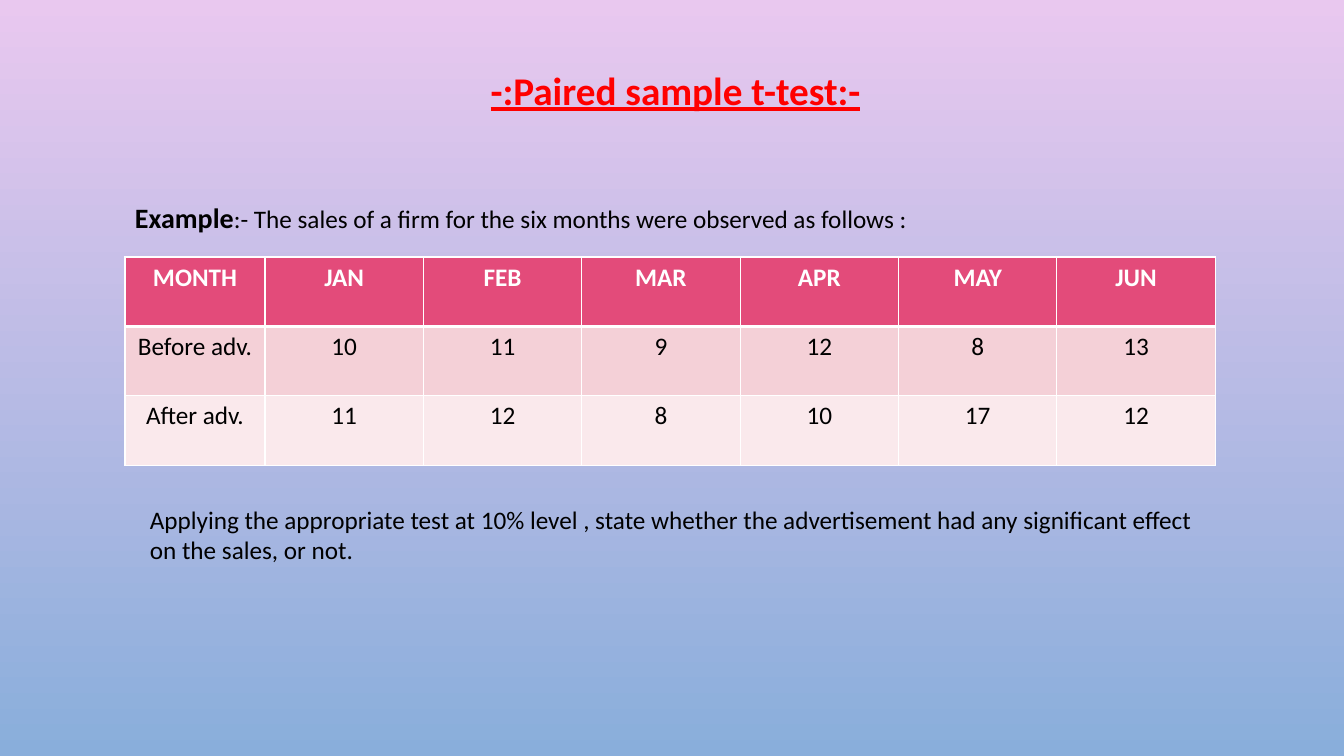
from lxml.etree import SubElement
from pptx import Presentation
from pptx.dml.color import RGBColor
from pptx.enum.text import MSO_ANCHOR as Anchor, MSO_AUTO_SIZE as AutoSize, PP_ALIGN as Align
from pptx.oxml.ns import qn
from pptx.util import Emu, Pt

# Content
TITLE = "-:Paired sample t-test:-"
EXAMPLE = [
    ("Example", 20, True),
    (":- The sales of a firm for the six months were observed as follows :", 18, False),
]
SALES = [
    ("MONTH", "JAN", "FEB", "MAR", "APR", "MAY", "JUN"),
    ("Before adv.", "10", "11", "9", "12", "8", "13"),
    ("After adv.", "11", "12", "8", "10", "17", "12"),
]
QUESTION = [
    ("Applying the appropriate test at 10% level , state whether the advertisement "
     "had any significant effect on the sales, or not.", 18, False),
]

# Colours and font
FONT = "Calibri"
BLACK = RGBColor(0x00, 0x00, 0x00)
WHITE = RGBColor(0xFF, 0xFF, 0xFF)
RED = RGBColor(0xFF, 0x00, 0x00)
SKY_TOP = RGBColor(0xE9, 0xC8, 0xEF)
SKY_BOTTOM = RGBColor(0x89, 0xAE, 0xDB)
ROW_FILLS = [RGBColor(0xE3, 0x4B, 0x7A), RGBColor(0xF4, 0xD0, 0xD7), RGBColor(0xFA, 0xE9, 0xEC)]

# Lengths in px
PAGE = (1344, 756)
TITLE_BOX = (242, 61, 867, 58)
EXAMPLE_BOX = (125, 196, 1086, 44)
QUESTION_BOX = (140, 499, 1080, 72)
TABLE_LEFT, TABLE_TOP = 125, 257
LABEL_WIDTH, MONTH_WIDTH, ROW_HEIGHT = 140, 158.4, 69.4


def px(length):
    return Emu(round(length * 914400 / 100.8))


def style(font, size, color, bold):
    font.name, font.size, font.bold = FONT, Pt(size), bold
    font.color.rgb = color


def add_text(page, place, spans):
    box = page.shapes.add_textbox(*map(px, place))
    box.text_frame.word_wrap = True
    para = box.text_frame.paragraphs[0]
    for text, size, bold in spans:
        span = para.add_run()
        span.text = text
        style(span.font, size, BLACK, bold)


def add_border(cell, side, points):
    line = SubElement(cell._tc.get_or_add_tcPr(), qn(f"a:ln{side}"), w=str(Pt(points)))
    fill = SubElement(line, qn("a:solidFill"))
    SubElement(fill, qn("a:srgbClr"), val=str(WHITE))


def add_sales_table(page):
    widths = [LABEL_WIDTH] + [MONTH_WIDTH] * (len(SALES[0]) - 1)
    place = (TABLE_LEFT, TABLE_TOP, sum(widths), ROW_HEIGHT * len(SALES))
    table = page.shapes.add_table(len(SALES), len(widths), *map(px, place)).table
    for column, width in zip(table.columns, widths):
        column.width = px(width)
    for r, values in enumerate(SALES):
        table.rows[r].height = px(ROW_HEIGHT)
        header = r == 0
        for c, value in enumerate(values):
            cell = table.cell(r, c)
            for side in "LRTB":
                # The rule under the header is heavier
                heavy = (r, side) in ((0, "B"), (1, "T"))
                add_border(cell, side, 3 if heavy else 1)
            cell.fill.solid()
            cell.fill.fore_color.rgb = ROW_FILLS[r]
            cell.text = value
            para = cell.text_frame.paragraphs[0]
            para.alignment = Align.CENTER
            style(para.font, 18, WHITE if header else BLACK, header)


def main():
    deck = Presentation()
    deck.slide_width, deck.slide_height = map(px, PAGE)
    page = deck.slides.add_slide(deck.slide_layouts[5])

    # Background
    sky = page.background.fill
    sky.gradient()
    sky.gradient_angle = 270
    for stop, color in zip(sky.gradient_stops, (SKY_TOP, SKY_BOTTOM)):
        stop.color.rgb = color

    # Title
    title = page.shapes.title
    title.left, title.top, title.width, title.height = map(px, TITLE_BOX)
    frame = title.text_frame
    frame.text = TITLE
    frame.vertical_anchor = Anchor.TOP
    frame.auto_size = AutoSize.NONE
    para = frame.paragraphs[0]
    para.alignment = Align.CENTER
    style(para.font, 28, RED, True)
    para.font.underline = True

    # Example, figures and question
    add_text(page, EXAMPLE_BOX, EXAMPLE)
    add_sales_table(page)
    add_text(page, QUESTION_BOX, QUESTION)

    deck.save("out.pptx")


if __name__ == "__main__":
    main()
